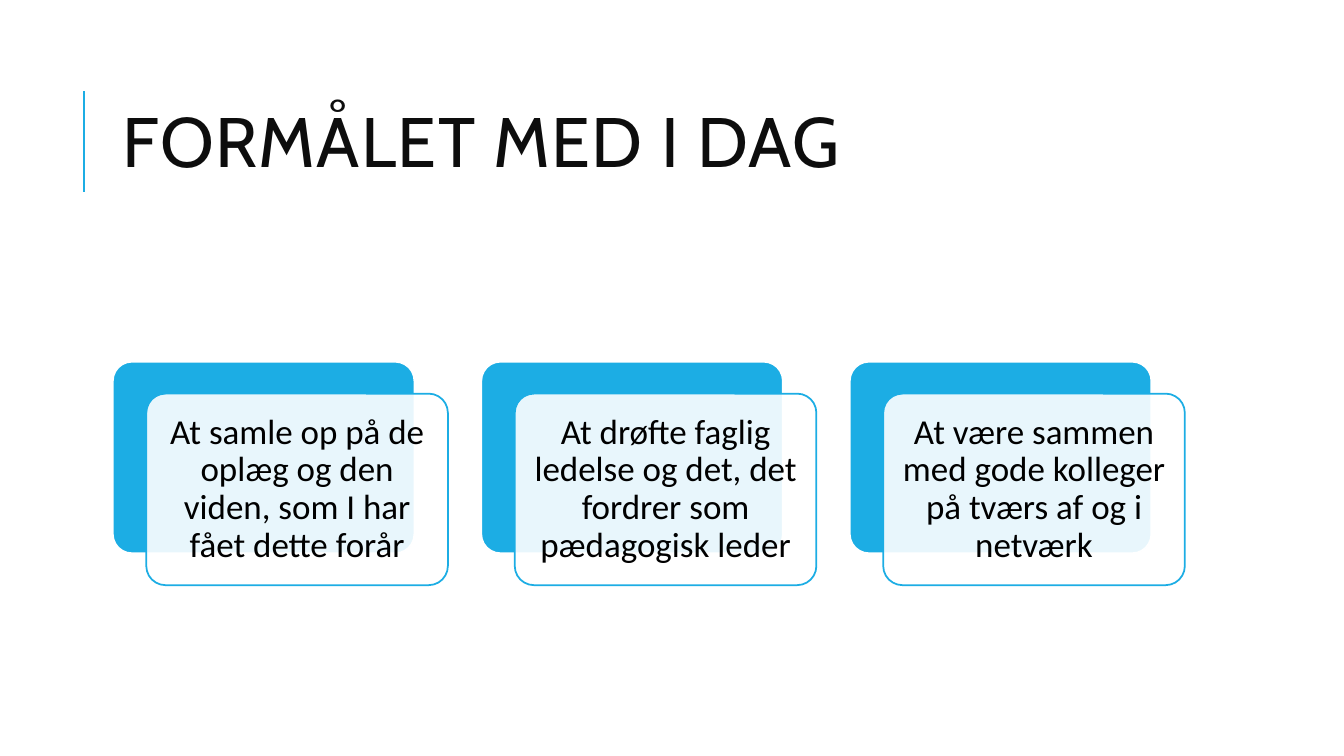
from dataclasses import dataclass

from lxml import etree
from pptx import Presentation
from pptx.dml.color import RGBColor
from pptx.enum.shapes import MSO_CONNECTOR, MSO_SHAPE
from pptx.enum.text import MSO_ANCHOR, PP_ALIGN
from pptx.oxml.ns import qn
from pptx.shapes.autoshape import Shape
from pptx.slide import Slide
from pptx.util import Pt

ROUNDED = MSO_SHAPE.ROUNDED_RECTANGLE
STRAIGHT = MSO_CONNECTOR.STRAIGHT
MIDDLE = MSO_ANCHOR.MIDDLE
CENTER = PP_ALIGN.CENTER

COLORS = {"accent": "1CADE4", "white": "FFFFFF", "title": "0D0D0D", "text": "000000"}
CARD_LEFT, CARD_TOP, CARD_STEP = 80.6, 258.4, 263.2
CARD_WIDTH, CARD_HEIGHT = 215.4, 136.8
FRONT_DX, FRONT_DY = 23.9, 22.8


@dataclass(frozen=True)
class Panel:
    left: float
    top: float
    fill: str
    line: str


def rgb(name: str) -> RGBColor:
    return RGBColor.from_string(COLORS[name])


def add_panel(s: Slide, panel: Panel) -> Shape:
    sp = s.shapes.add_shape(ROUNDED, Pt(panel.left), Pt(panel.top),
                            Pt(CARD_WIDTH), Pt(CARD_HEIGHT))
    sp.adjustments[0] = 0.1
    sp.shadow.inherit = False
    sp.fill.solid()
    sp.fill.fore_color.rgb = rgb(panel.fill)
    sp.line.color.rgb = rgb(panel.line)
    sp.line.width = Pt(1.25)
    return sp


def set_opacity(sp: Shape, percent: int) -> None:
    color = sp._element.spPr.find(qn("a:solidFill")).find(qn("a:srgbClr"))
    etree.SubElement(color, qn("a:alpha")).set("val", str(percent * 1000))


def add_card(s: Slide, left: float, text: str) -> None:
    """Draw a solid panel with an offset, translucent text panel over it."""
    add_panel(s, Panel(left, CARD_TOP, "accent", "white"))
    front = add_panel(s, Panel(left + FRONT_DX, CARD_TOP + FRONT_DY, "white", "accent"))
    set_opacity(front, 90)
    tf = front.text_frame
    tf.word_wrap = True
    tf.vertical_anchor = MIDDLE
    tf.margin_left = tf.margin_right = tf.margin_top = tf.margin_bottom = Pt(7.2)
    p = tf.paragraphs[0]
    p.text = text
    p.alignment = CENTER
    p.line_spacing = 0.9
    p.font.name = "Calibri"
    p.font.size = Pt(25)
    p.font.color.rgb = rgb("text")


def add_title(s: Slide, text: str) -> None:
    tf = s.shapes.add_textbox(Pt(80.6), Pt(46), Pt(765.4), Pt(118)).text_frame
    tf.word_wrap = True
    tf.vertical_anchor = MIDDLE
    p = tf.paragraphs[0]
    p.line_spacing = 0.8
    r = p.add_run()
    r.text = text
    r.font.name = "Cabin"
    r.font.size = Pt(50)
    r.font.color.rgb = rgb("title")
    r.font._element.set("spc", "100")


def add_title_rule(s: Slide) -> None:
    rule = s.shapes.add_connector(STRAIGHT, Pt(60), Pt(136.8), Pt(60), Pt(64.8))
    rule.line.color.rgb = rgb("accent")
    rule.line.width = Pt(1.5)
    etree.SubElement(rule._element.spPr, qn("a:effectLst"))


def main() -> None:
    prs = Presentation()
    prs.slide_width, prs.slide_height = Pt(960), Pt(540)
    s = prs.slides.add_slide(prs.slide_layouts[6])
    add_title_rule(s)
    add_title(s, "FORMÅLET MED I DAG")
    purposes = (
        "At samle op på de oplæg og den viden, som I har fået dette forår",
        "At drøfte faglig ledelse og det, det fordrer som pædagogisk leder",
        "At være sammen med gode kolleger på tværs af og i netværk",
    )
    for i, purpose in enumerate(purposes):
        add_card(s, CARD_LEFT + i * CARD_STEP, purpose)
    prs.save("out.pptx")


if __name__ == "__main__":
    main()
